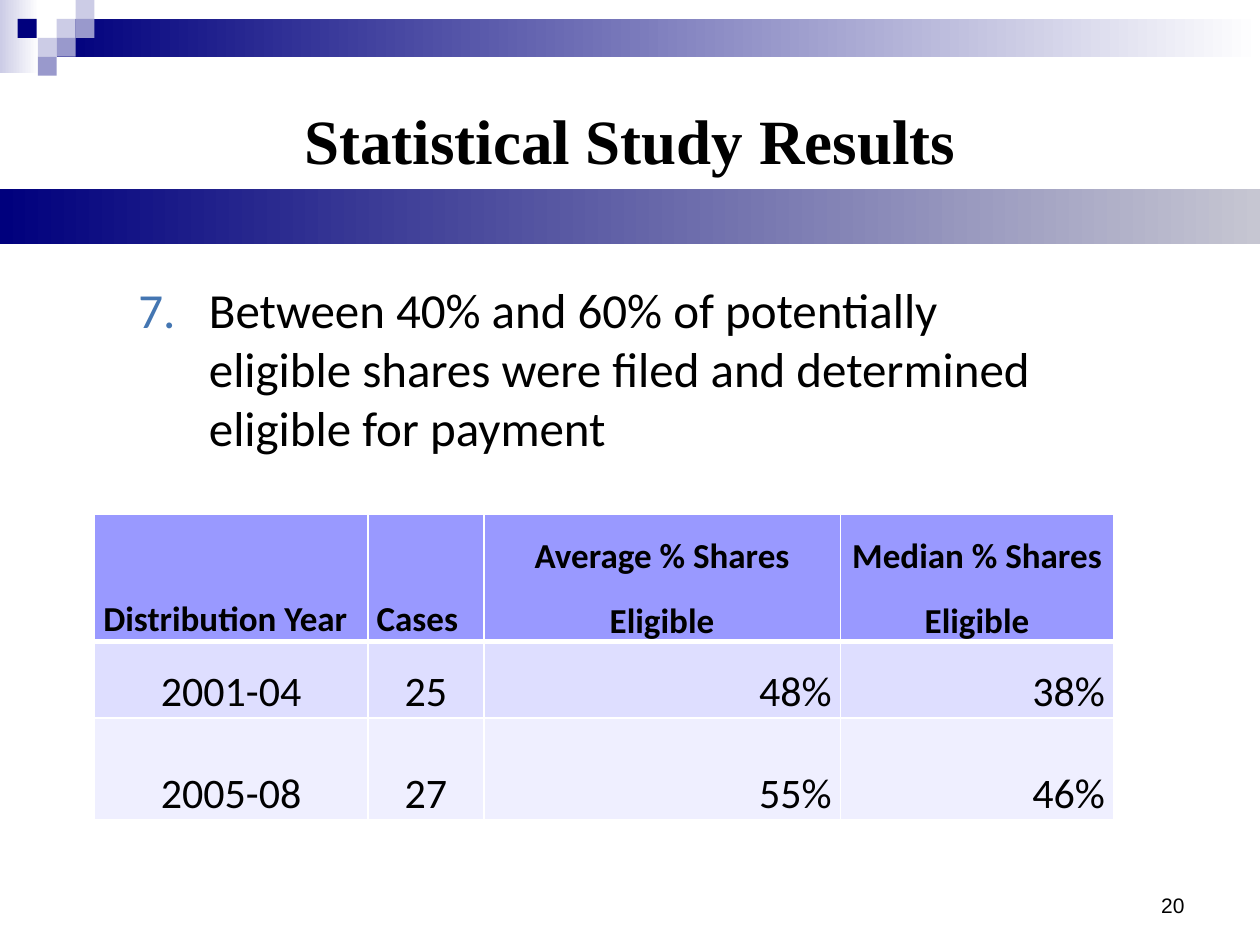
from typing import NamedTuple, Optional

from lxml.etree import SubElement
from pptx import Presentation
from pptx.dml.color import RGBColor
from pptx.enum.shapes import MSO_SHAPE
from pptx.enum.text import MSO_ANCHOR, PP_ALIGN
from pptx.oxml import parse_xml
from pptx.oxml.ns import nsdecls, qn
from pptx.util import Inches, Pt

BLACK = RGBColor(0x00, 0x00, 0x00)
WHITE = RGBColor(0xFF, 0xFF, 0xFF)
NAVY = RGBColor(0x00, 0x00, 0x7D)
LAVENDER = RGBColor(0xCC, 0xCC, 0xE6)
VIOLET = RGBColor(0x99, 0x99, 0xCC)
SILVER = RGBColor(0xC6, 0xC6, 0xD2)
NUMBER_BLUE = RGBColor(0x44, 0x76, 0xB2)
HEADER_FILL = RGBColor(0x99, 0x99, 0xFF)
ROW_FILLS = (RGBColor(0xDE, 0xDE, 0xFF), RGBColor(0xEF, 0xEF, 0xFF))


class Block(NamedTuple):
    left: float
    top: float
    width: float
    height: float
    color: RGBColor
    fade_to: Optional[RGBColor] = None


class Column(NamedTuple):
    width: float
    header: str
    values: tuple
    header_alignment: PP_ALIGN
    alignment: PP_ALIGN


SQUARE = 0.15
BLOCKS = (
    Block(0, 0, 0.31, 0.58, LAVENDER, WHITE),
    Block(0.45, 0.15, 9.55, 0.3, NAVY, WHITE),
    *(Block(left, row * SQUARE, SQUARE, SQUARE, color) for left, row, color in (
        (0.45, 1, LAVENDER), (0.6, 0, LAVENDER), (0.6, 1, VIOLET),
        (0.3, 2, LAVENDER), (0.14, 1, NAVY), (0.45, 2, VIOLET),
        (0.3, 3, VIOLET))),
    Block(0, 1.5, 10, 0.44, NAVY, SILVER),
)
COLUMNS = (
    Column(2.17, "Distribution Year", ("2001-04", "2005-08"),
           PP_ALIGN.LEFT, PP_ALIGN.CENTER),
    Column(0.92, "Cases", ("25", "27"), PP_ALIGN.LEFT, PP_ALIGN.CENTER),
    Column(2.83, "Average % Shares Eligible", ("48%", "55%"),
           PP_ALIGN.CENTER, PP_ALIGN.RIGHT),
    Column(2.17, "Median % Shares Eligible", ("38%", "46%"),
           PP_ALIGN.CENTER, PP_ALIGN.RIGHT),
)
ROW_HEIGHTS = (1.01, 0.61, 0.81)


def write_text(text_frame, text: str, *, size: float, font: str = "Calibri",
               bold: bool = False, alignment=PP_ALIGN.LEFT,
               line_spacing: float = 1.0, anchor=MSO_ANCHOR.TOP):
    text_frame.word_wrap = True
    text_frame.vertical_anchor = anchor
    paragraph = text_frame.paragraphs[0]
    paragraph.alignment = alignment
    paragraph.line_spacing = line_spacing
    run = paragraph.add_run()
    run.text = text
    run.font.size = Pt(size)
    run.font.name = font
    run.font.bold = bold
    run.font.color.rgb = BLACK
    return paragraph


def draw_block(slide, block: Block) -> None:
    shape = slide.shapes.add_shape(
        MSO_SHAPE.RECTANGLE, Inches(block.left), Inches(block.top),
        Inches(block.width), Inches(block.height))
    shape.shadow.inherit = False
    shape.line.fill.background()
    if block.fade_to is None:
        shape.fill.solid()
        shape.fill.fore_color.rgb = block.color
    else:
        shape.fill.gradient()
        shape.fill.gradient_angle = 0
        for stop, color in zip(shape.fill.gradient_stops,
                               (block.color, block.fade_to)):
            stop.color.rgb = color


def number_paragraph(paragraph, start: int, color: RGBColor) -> None:
    properties = paragraph._p.get_or_add_pPr()
    properties.set("marL", str(Inches(1.06)))
    properties.set("indent", str(Inches(-0.56)))
    bullet_color = SubElement(properties, qn("a:buClr"))
    SubElement(bullet_color, qn("a:srgbClr")).set("val", str(color))
    SubElement(properties, qn("a:buFont")).set("typeface", "Calibri")
    numbering = SubElement(properties, qn("a:buAutoNum"))
    numbering.set("type", "arabicPeriod")
    numbering.set("startAt", str(start))


def set_borders(cell, widths: dict) -> None:
    """Put white lines on the cell; widths maps L, R, T, B to points."""
    properties = cell._tc.get_or_add_tcPr()
    for position, (side, width) in enumerate(widths.items()):
        properties.insert(position, parse_xml(
            f'<a:ln{side} {nsdecls("a")} w="{Pt(width)}"><a:solidFill>'
            f'<a:srgbClr val="{WHITE}"/></a:solidFill></a:ln{side}>'))


def draw_table(slide) -> None:
    table = slide.shapes.add_table(
        len(ROW_HEIGHTS), len(COLUMNS), Inches(0.75), Inches(4.08),
        Inches(sum(column.width for column in COLUMNS)),
        Inches(sum(ROW_HEIGHTS))).table
    for row, height in zip(table.rows, ROW_HEIGHTS):
        row.height = Inches(height)
    for column_index, column in enumerate(COLUMNS):
        table.columns[column_index].width = Inches(column.width)
        for row_index, text in enumerate((column.header, *column.values)):
            is_header = row_index == 0
            cell = table.cell(row_index, column_index)
            cell.margin_left = cell.margin_right = Inches(0.07)
            cell.margin_top = cell.margin_bottom = 0
            cell.vertical_anchor = MSO_ANCHOR.BOTTOM
            cell.fill.solid()
            cell.fill.fore_color.rgb = (
                HEADER_FILL if is_header else ROW_FILLS[row_index - 1])
            set_borders(cell, {"L": 1, "R": 1, "T": 3 if row_index == 1 else 1,
                               "B": 3 if is_header else 1})
            write_text(
                cell.text_frame, text, size=20 if is_header else 24,
                bold=is_header, line_spacing=1.5, anchor=None,
                alignment=column.header_alignment if is_header
                else column.alignment)


def main() -> None:
    presentation = Presentation()
    presentation.slide_width = Inches(10)
    presentation.slide_height = Inches(7.5)
    slide = presentation.slides.add_slide(presentation.slide_layouts[5])

    for block in BLOCKS:
        draw_block(slide, block)

    title = slide.shapes.title
    title.left, title.top = Inches(0), Inches(0.84)
    title.width, title.height = Inches(10), Inches(0.62)
    write_text(title.text_frame, "Statistical Study Results", size=36,
               font="Times New Roman", bold=True, alignment=PP_ALIGN.CENTER,
               line_spacing=0.85, anchor=MSO_ANCHOR.MIDDLE)

    finding = slide.shapes.add_textbox(
        Inches(0.5), Inches(2.17), Inches(8.22), Inches(1.68))
    paragraph = write_text(
        finding.text_frame,
        "Between 40% and 60% of potentially eligible shares were filed "
        "and determined eligible for payment", size=28)
    number_paragraph(paragraph, 7, NUMBER_BLUE)

    draw_table(slide)

    page_number = slide.shapes.add_textbox(
        Inches(7.17), Inches(6.83), Inches(2.33), Inches(0.5))
    write_text(page_number.text_frame, "20", size=12, font="Arial",
               alignment=PP_ALIGN.RIGHT, anchor=MSO_ANCHOR.BOTTOM)

    presentation.save("out.pptx")


if __name__ == "__main__":
    main()
